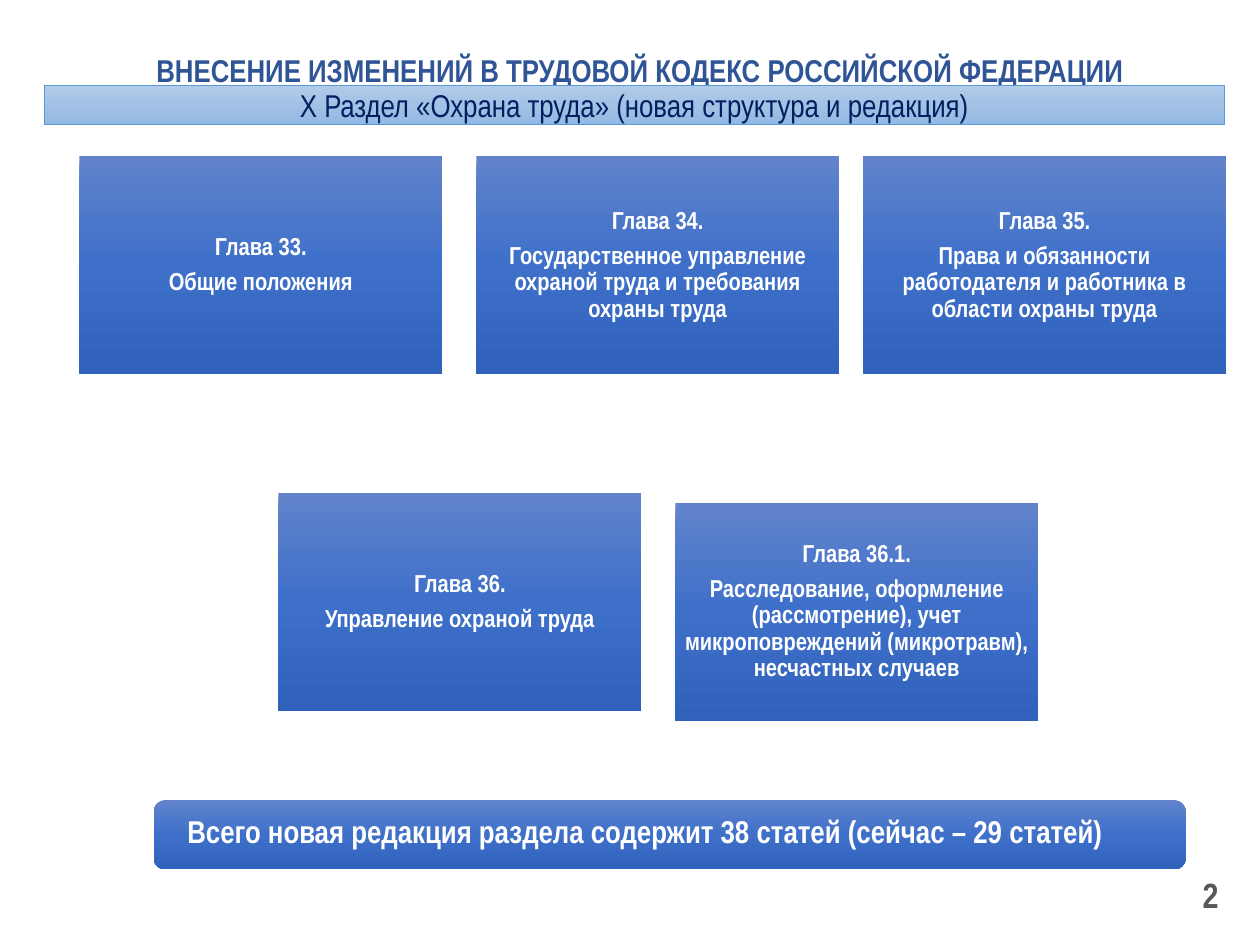
"""Build the slide on the new structure of the labour protection section."""
from copy import deepcopy
from dataclasses import dataclass

from pptx import Presentation, util as u
from pptx.dml.color import RGBColor
from pptx.enum import shapes, text
from pptx.oxml.ns import qn


@dataclass(frozen=True)
class Theme:
    font: str = "Arial Narrow"
    title: str = "2F5597"
    section: str = "002060"
    on_dark: str = "FFFFFF"
    number: str = "595959"
    border: str = "5B9BD5"
    light: tuple = ("B1CBE9", "A3C1E5", "93B9E4")
    dark: tuple = ("6183CB", "3E70CA", "3062BB")
    chapter_size: int = 14
    heading_size: int = 18
    number_size: int = 20


class SlideBuilder:
    def __init__(self, slide, theme):
        self.slide = slide
        self.theme = theme

    def set_text(self, frame, lines, size, color, align=text.PP_ALIGN.CENTER, bold=True,
                 anchor=text.MSO_ANCHOR.MIDDLE, insets=(0.1, 0.05, 0.1, 0.05),
                 spacing=0.9, after=0):
        frame.word_wrap = True
        frame.vertical_anchor = anchor
        (frame.margin_left, frame.margin_top,
         frame.margin_right, frame.margin_bottom) = map(u.Inches, insets)
        for index, line in enumerate(lines):
            paragraph = frame.add_paragraph() if index else frame.paragraphs[0]
            paragraph.text = line
            paragraph.alignment = align
            paragraph.line_spacing = spacing
            paragraph.space_after = u.Pt(after)
            paragraph.font.name = self.theme.font
            paragraph.font.size = u.Pt(size)
            paragraph.font.bold = bold
            paragraph.font.color.rgb = RGBColor.from_string(color)

    def label(self, box, line, size, color, **style):
        textbox = self.slide.shapes.add_textbox(*map(u.Inches, box))
        self.set_text(textbox.text_frame, [line], size, color, **style)

    def panel(self, box, lines, size, color, colors, border=None,
              kind=shapes.MSO_SHAPE.RECTANGLE, **style):
        panel = self.slide.shapes.add_shape(kind, *map(u.Inches, box))
        panel.shadow.inherit = False
        self.gradient(panel, colors)
        if border:
            panel.line.color.rgb = RGBColor.from_string(border)
            panel.line.width = u.Pt(0.5)
        else:
            panel.line.fill.background()
        self.set_text(panel.text_frame, lines, size, color, **style)

    def gradient(self, panel, colors):
        panel.fill.gradient()
        panel.fill.gradient_angle = 270
        stop_list = next(panel.element.iter(qn("a:gsLst")))
        stop_list.append(deepcopy(stop_list[-1]))
        for stop, color, position in zip(panel.fill.gradient_stops, colors, (0, 0.5, 1)):
            stop.color.rgb = RGBColor.from_string(color)
            stop.position = position

    def chapter(self, left, top, number, subject):
        self.panel((left, top, 2.88, 1.73), [f"Глава {number}.", subject],
                   self.theme.chapter_size, self.theme.on_dark, self.theme.dark,
                   insets=(0.06,) * 4, after=4.9)


CHAPTERS = [
    (0.63, 1.24, "33", "Общие положения"),
    (3.78, 1.24, "34", "Государственное управление охраной труда и требования охраны труда"),
    (6.85, 1.24, "35", "Права и обязанности работодателя и работника в области охраны труда"),
    (2.21, 3.91, "36", "Управление охраной труда"),
    (5.36, 3.99, "36.1", "Расследование, оформление (рассмотрение), учет "
                         "микроповреждений (микротравм), несчастных случаев"),
]


def main():
    deck = Presentation()
    deck.slide_width, deck.slide_height = u.Inches(10), u.Inches(7.5)
    theme = Theme()
    builder = SlideBuilder(deck.slides.add_slide(deck.slide_layouts[6]), theme)

    builder.label((0.83, 0.13, 8.5, 0.63),
                  "ВНЕСЕНИЕ ИЗМЕНЕНИЙ В ТРУДОВОЙ КОДЕКС РОССИЙСКОЙ ФЕДЕРАЦИИ",
                  theme.heading_size, theme.title, anchor=text.MSO_ANCHOR.BOTTOM)
    builder.panel((0.35, 0.68, 9.37, 0.31),
                  ["Х Раздел «Охрана труда» (новая структура и редакция)"],
                  theme.heading_size, theme.section, theme.light,
                  border=theme.border, bold=False, spacing=1.0)
    for chapter in CHAPTERS:
        builder.chapter(*chapter)
    builder.panel((1.22, 6.35, 8.19, 0.55),
                  ["Всего новая редакция раздела содержит 38 статей (сейчас – 29 статей)"],
                  theme.heading_size, theme.on_dark, theme.dark,
                  kind=shapes.MSO_SHAPE.ROUNDED_RECTANGLE, align=text.PP_ALIGN.LEFT,
                  insets=(0.24, 0, 0.24, 0.03))
    builder.label((7.44, 6.9, 2.33, 0.4), "2", theme.number_size, theme.number,
                  align=text.PP_ALIGN.RIGHT, spacing=1.0)

    deck.save("out.pptx")


if __name__ == "__main__":
    main()
